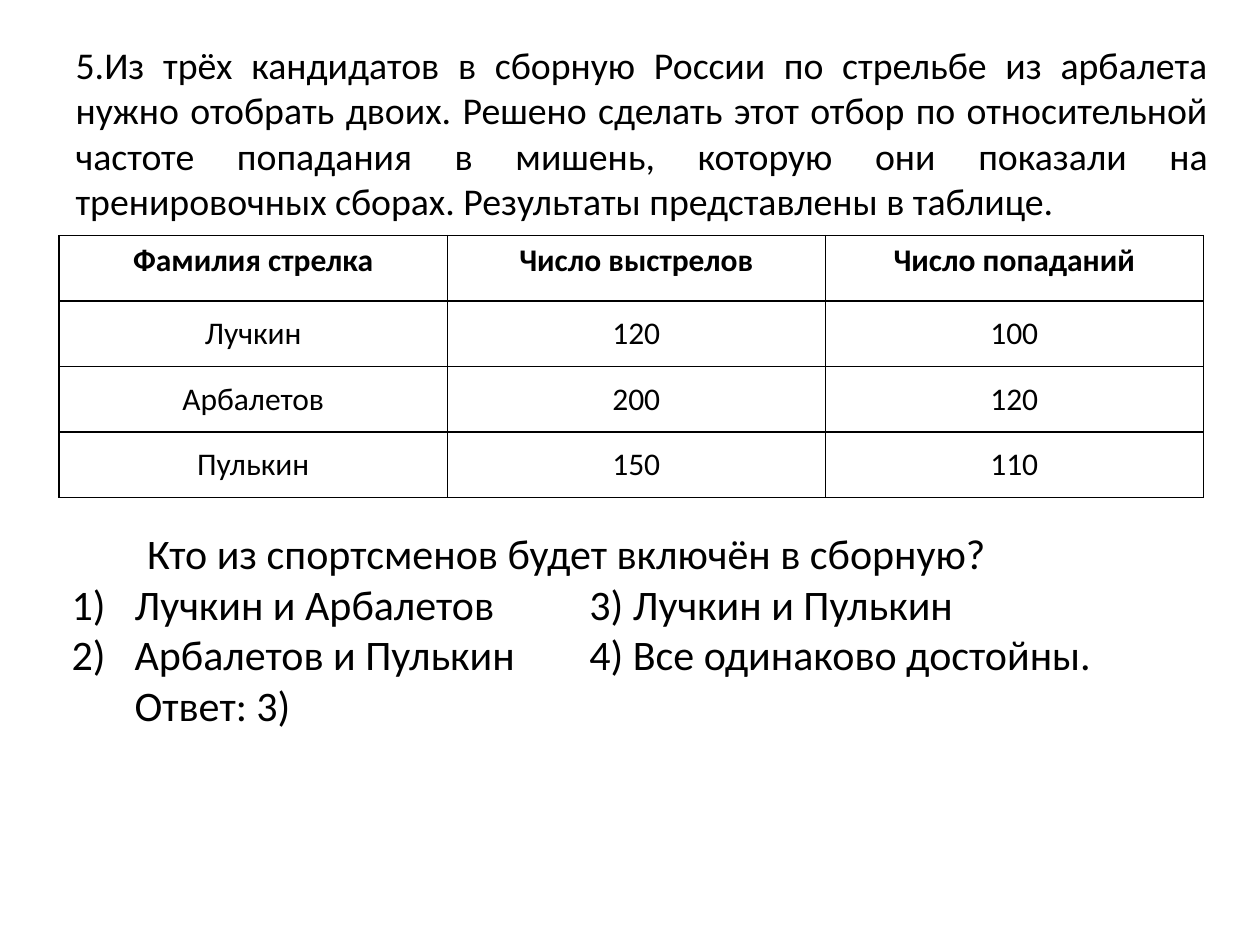
from lxml.etree import SubElement as Sub
from pptx import Presentation
from pptx.dml.color import RGBColor
from pptx.enum.text import MSO_ANCHOR as Anchor, MSO_AUTO_SIZE as Fit, PP_ALIGN as Align
from pptx.oxml.ns import qn
from pptx.util import Inches, Pt

BLACK = RGBColor(0, 0, 0)
WHITE = RGBColor(255, 255, 255)

TASK = (
    "5.Из трёх кандидатов в сборную России по стрельбе из арбалета "
    "нужно отобрать двоих. Решено сделать этот отбор по относительной "
    "частоте попадания в мишень, которую они показали на "
    "тренировочных сборах. Результаты представлены в таблице."
)
ROWS = [
    ("Фамилия стрелка", "Число выстрелов", "Число попаданий"),
    ("Лучкин", "120", "100"),
    ("Арбалетов", "200", "120"),
    ("Пулькин", "150", "110"),
]
WIDTHS = (3.08, 3, 3)
HIGH = 0.52
QUERY = "Кто из спортсменов будет включён в сборную?"
PICKS = [
    "Лучкин и Арбалетов\t3) Лучкин и Пулькин",
    "Арбалетов и Пулькин\t4) Все одинаково достойны. Ответ: 3)",
]


def style(item, form):
    for name, value in form.items():
        setattr(item, name, value)


def write(para, text, size, bold=False, align=Align.LEFT):
    para.alignment = align
    run = para.add_run()
    run.text = text
    style(run.font, {"name": "Calibri", "size": Pt(size), "bold": bold})
    run.font.color.rgb = BLACK


def place(shape, left, top, width, height):
    box = {"left": left, "top": top, "width": width, "height": height}
    style(shape, {name: Inches(value) for name, value in box.items()})


def add_title(slide):
    title = slide.shapes.title
    place(title, 0.5, 0.3, 9.19, 1.5)
    frame = title.text_frame
    style(frame, {"vertical_anchor": Anchor.MIDDLE, "word_wrap": True, "auto_size": Fit.NONE})
    write(frame.paragraphs[0], TASK, 21.6, align=Align.JUSTIFY)


def add_edges(cell):
    props = cell._tc.get_or_add_tcPr()
    for side in ("a:lnL", "a:lnR", "a:lnT", "a:lnB"):
        line = Sub(props, qn(side), w=str(Pt(1)))
        fill = Sub(line, qn("a:solidFill"))
        Sub(fill, qn("a:srgbClr"), val=str(BLACK))


def add_grid(slide):
    size = (0.47, 1.87, sum(WIDTHS), HIGH * len(ROWS))
    grid = slide.shapes.add_table(len(ROWS), len(WIDTHS), *map(Inches, size)).table
    for col, width in zip(grid.columns, WIDTHS):
        col.width = Inches(width)
    for i, row in enumerate(ROWS):
        grid.rows[i].height = Inches(HIGH)
        for j, text in enumerate(row):
            cell = grid.cell(i, j)
            head = i == 0
            cell.vertical_anchor = Anchor.TOP if head else Anchor.MIDDLE
            write(cell.text_frame.paragraphs[0], text, 18, head, Align.CENTER)
            add_edges(cell)
            cell.fill.solid()
            cell.fill.fore_color.rgb = WHITE


def indent(para, left, first=0):
    props = para._p.get_or_add_pPr()
    props.set("marL", str(Inches(left)))
    props.set("indent", str(Inches(first)))
    return props


def add_quiz(slide):
    box = slide.shapes.add_textbox(*map(Inches, (0.47, 4.14, 8.98, 2.12)))
    frame = box.text_frame
    style(frame, {"word_wrap": True, "auto_size": Fit.SHAPE_TO_FIT_TEXT})
    lead = frame.paragraphs[0]
    write(lead, QUERY, 24)
    indent(lead, 0.6)
    for text in PICKS:
        para = frame.add_paragraph()
        write(para, text, 24)
        props = indent(para, 0.5, -0.5)
        Sub(props, qn("a:buFont"), typeface="+mj-lt")
        Sub(props, qn("a:buAutoNum"), type="arabicParenR")
        tabs = Sub(props, qn("a:tabLst"))
        Sub(tabs, qn("a:tab"), pos=str(Inches(4.11)), algn="l")


def main():
    deck = Presentation()
    style(deck, {"slide_width": Inches(10), "slide_height": Inches(7.5)})
    slide = deck.slides.add_slide(deck.slide_layouts[5])
    add_title(slide)
    add_grid(slide)
    add_quiz(slide)
    deck.save("out.pptx")


if __name__ == "__main__":
    main()
